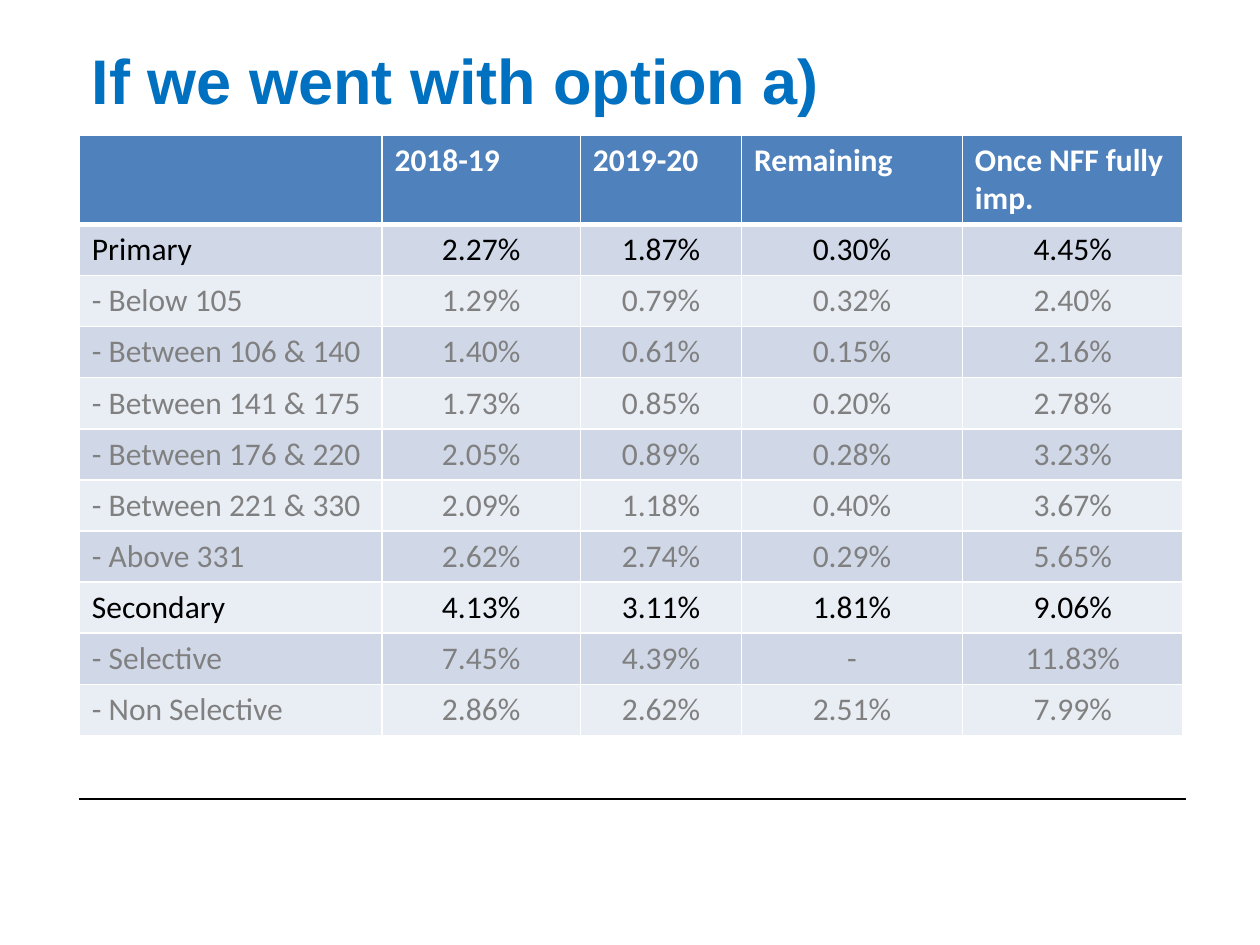
"""Build a slide tabling the yearly funding change by school size under option a)."""
from dataclasses import dataclass

import lxml.etree
import pptx
import pptx.dml.color
import pptx.enum.shapes
import pptx.enum.text
import pptx.oxml.ns
import pptx.util

Cm = pptx.util.Cm
Pt = pptx.util.Pt
RGB = pptx.dml.color.RGBColor
Align = pptx.enum.text.PP_ALIGN
qn = pptx.oxml.ns.qn


@dataclass(frozen=True)
class Theme:
    title_font: str = "Arial"
    table_font: str = "Calibri"
    title_size: float = 36
    table_size: float = 18
    title: str = "0070C0"
    header: str = "4F81BD"
    bands: tuple[str, str] = ("D0D8E8", "E9EDF4")
    white: str = "FFFFFF"
    phase: str = "000000"
    subgroup: str = "808080"
    grid: float = 1
    header_rule: float = 3
    footer_rule: float = 1


@dataclass(frozen=True)
class Group:
    label: str
    changes: tuple[str, str, str, str]

    @property
    def is_phase(self) -> bool:
        return not self.label.startswith("-")


@dataclass(frozen=True)
class CellStyle:
    fill: str
    color: str
    bold: bool = False
    top: float = Theme.grid
    bottom: float = Theme.grid


THEME = Theme()
LEFT = 1.6
COLUMN_WIDTHS = (6.1, 4, 3.25, 4.45, 4.45)
HEADER_HEIGHT, ROW_HEIGHT = 1.76, 1.03
HEADINGS = ("", "2018-19", "2019-20", "Remaining", "Once NFF fully imp.")
GROUPS = (
    Group("Primary", ("2.27%", "1.87%", "0.30%", "4.45%")),
    Group("- Below 105", ("1.29%", "0.79%", "0.32%", "2.40%")),
    Group("- Between 106 & 140", ("1.40%", "0.61%", "0.15%", "2.16%")),
    Group("- Between 141 & 175", ("1.73%", "0.85%", "0.20%", "2.78%")),
    Group("- Between 176 & 220", ("2.05%", "0.89%", "0.28%", "3.23%")),
    Group("- Between 221 & 330", ("2.09%", "1.18%", "0.40%", "3.67%")),
    Group("- Above 331", ("2.62%", "2.74%", "0.29%", "5.65%")),
    Group("Secondary", ("4.13%", "3.11%", "1.81%", "9.06%")),
    Group("- Selective", ("7.45%", "4.39%", "-", "11.83%")),
    Group("- Non Selective", ("2.86%", "2.62%", "2.51%", "7.99%")),
)


def add_run(paragraph, text: str, font: str, size: float, color: str, bold: bool) -> None:
    run = paragraph.add_run()
    run.text = text
    run.font.name = font
    run.font.size = Pt(size)
    run.font.bold = bold
    run.font.color.rgb = RGB.from_string(color)


def add_border(cell, side: str, width: float) -> None:
    properties = cell._tc.get_or_add_tcPr()
    border = lxml.etree.SubElement(properties, qn(f"a:ln{side}"), w=str(Pt(width)))
    fill = lxml.etree.SubElement(border, qn("a:solidFill"))
    lxml.etree.SubElement(fill, qn("a:srgbClr"), val=THEME.white)


def fill_cell(cell, text: str, style: CellStyle, align: Align) -> None:
    widths = {"L": THEME.grid, "R": THEME.grid, "T": style.top, "B": style.bottom}
    for side, width in widths.items():
        add_border(cell, side, width)
    cell.fill.solid()
    cell.fill.fore_color.rgb = RGB.from_string(style.fill)
    paragraph = cell.text_frame.paragraphs[0]
    paragraph.alignment = align
    if text:
        add_run(paragraph, text, THEME.table_font, THEME.table_size, style.color, style.bold)


def add_title(slide, text: str) -> None:
    title = slide.shapes.title
    title.left, title.top, title.width, title.height = Cm(LEFT), Cm(0), Cm(22.86), Cm(3.18)
    title.text_frame.vertical_anchor = pptx.enum.text.MSO_ANCHOR.MIDDLE
    paragraph = title.text_frame.paragraphs[0]
    paragraph.alignment = Align.LEFT
    add_run(paragraph, text, THEME.title_font, THEME.title_size, THEME.title, True)


def add_footer_rule(slide) -> None:
    rule = slide.shapes.add_connector(
        pptx.enum.shapes.MSO_CONNECTOR.STRAIGHT, Cm(LEFT), Cm(16.1), Cm(23.9), Cm(16.1))
    rule.line.color.rgb = RGB.from_string(THEME.phase)
    rule.line.width = Pt(THEME.footer_rule)
    lxml.etree.SubElement(rule._element.spPr, qn("a:effectLst"))


def add_changes_table(slide) -> None:
    height = HEADER_HEIGHT + ROW_HEIGHT * len(GROUPS)
    table = slide.shapes.add_table(
        len(GROUPS) + 1, len(HEADINGS),
        Cm(LEFT), Cm(2.72), Cm(sum(COLUMN_WIDTHS)), Cm(height)).table
    for column, width in zip(table.columns, COLUMN_WIDTHS):
        column.width = Cm(width)
    for row in table.rows:
        row.height = Cm(ROW_HEIGHT)
    table.rows[0].height = Cm(HEADER_HEIGHT)

    header = CellStyle(THEME.header, THEME.white, bold=True, bottom=THEME.header_rule)
    for column, heading in enumerate(HEADINGS):
        fill_cell(table.cell(0, column), heading, header, Align.LEFT)
    for index, group in enumerate(GROUPS):
        style = CellStyle(
            THEME.bands[index % 2],
            THEME.phase if group.is_phase else THEME.subgroup,
            top=THEME.grid if index else THEME.header_rule)
        for column, text in enumerate((group.label, *group.changes)):
            align = Align.CENTER if column else Align.LEFT
            fill_cell(table.cell(index + 1, column), text, style, align)


def main() -> None:
    deck = pptx.Presentation()
    deck.slide_width, deck.slide_height = Cm(25.4), Cm(19.05)
    slide = deck.slides.add_slide(deck.slide_layouts.get_by_name("Title Only"))
    add_title(slide, "If we went with option a)")
    add_footer_rule(slide)
    add_changes_table(slide)
    deck.save("out.pptx")


if __name__ == "__main__":
    main()
